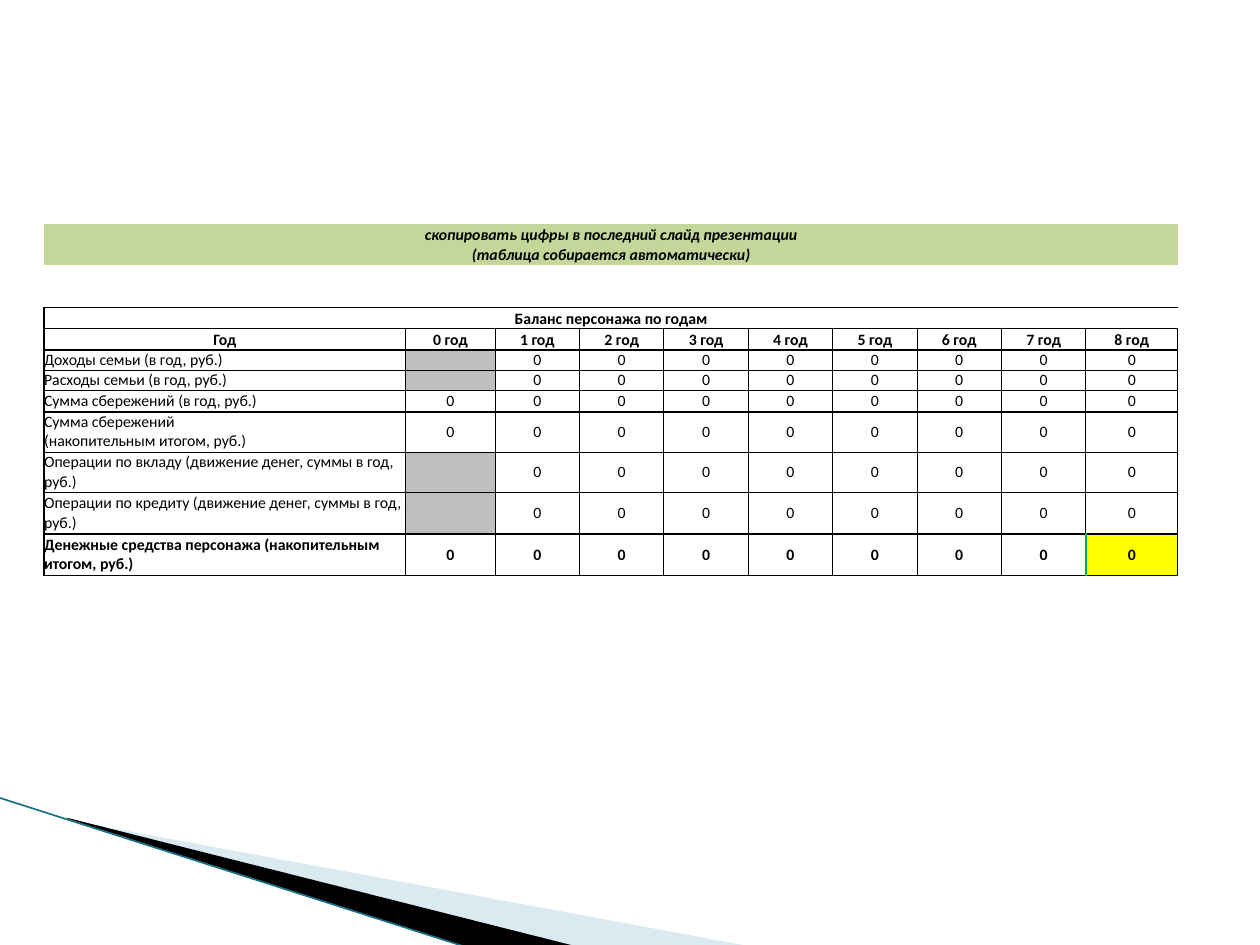
import pptx
import pptx.util
import pptx.dml.color
import pptx.enum.shapes
import pptx.enum.text
import pptx.oxml.ns
import lxml.etree

COLS, ROWS = 100, 75
PLAIN = "{2D5ABB26-0587-4C30-8999-92F81FD0307C}"
WIDTHS = [28.7, 7.1] + [6.7] * 7 + [7.3]
HEIGHTS = [1.6, 1.6, 1.6, 1.8, 1.7, 1.7, 1.6, 1.6, 1.7, 3.2, 3.2, 3.3, 3.3]
BANNER = ["скопировать цифры в последний слайд презентации",
          "(таблица собирается автоматически)"]
TITLE = "Баланс персонажа по годам"
BODY = [
    ("Доходы семьи (в год, руб.)", ""),
    ("Расходы семьи (в год, руб.)", ""),
    ("Сумма сбережений (в год, руб.)", "0"),
    ("Сумма сбережений\v(накопительным итогом, руб.)", "0"),
    ("Операции по вкладу (движение денег, суммы в год, руб.)", ""),
    ("Операции по кредиту (движение денег, суммы в год, руб.)", ""),
    ("Денежные средства персонажа (накопительным итогом, руб.)", "0"),
]
TOP, HEAD, LAST, END = 4, 5, 12, 9
HEAVY = {4, 5, 6, 9, 12, 13}


def rgb(code):
    return pptx.dml.color.RGBColor.from_string(code)


def sub(node, tag, **attrs):
    return lxml.etree.SubElement(node, pptx.oxml.ns.qn(tag), attrs)


def put(item, values):
    for name, value in values.items():
        setattr(item, name, value)


class Deck:
    font = {"name": "Calibri", "size": pptx.util.Pt(9)}
    ink = "000000"

    def __init__(self):
        self.show = pptx.Presentation()
        put(self.show, {"slide_width": pptx.util.Inches(10),
                        "slide_height": pptx.util.Inches(7.5)})
        self.slide = self.show.slides.add_slide(self.show.slide_layouts[6])

    def x(self, col):
        return round(self.show.slide_width * col / COLS)

    def y(self, row):
        return round(self.show.slide_height * row / ROWS)

    def shape(self, points, color, alpha=None):
        spots = [(self.x(a), self.y(b)) for a, b in points]
        pen = self.slide.shapes.build_freeform(*spots[0])
        pen.add_line_segments(spots[1:], close=True)
        form = pen.convert_to_shape()
        form.shadow.inherit = False
        form.fill.solid()
        form.fill.fore_color.rgb = rgb(color)
        form.line.fill.background()
        if alpha:
            tone = form.fill._xPr.find(".//" + pptx.oxml.ns.qn("a:srgbClr"))
            sub(tone, "a:alpha", val=str(alpha * 1000))

    def line(self, start, stop, color, width):
        kind = pptx.enum.shapes.MSO_CONNECTOR.STRAIGHT
        rule = self.slide.shapes.add_connector(
            kind, self.x(start[0]), self.y(start[1]), self.x(stop[0]), self.y(stop[1]))
        rule.line.color.rgb = rgb(color)
        rule.line.width = pptx.util.Pt(width)
        sub(rule._element.spPr, "a:effectLst")

    def table(self, left, top, widths, heights):
        frame = self.slide.shapes.add_table(
            len(heights), len(widths), self.x(left), self.y(top),
            self.x(sum(widths)), self.y(sum(heights)))
        grid = frame.table
        put(grid, {"first_row": False, "horz_banding": False})
        grid._tbl.tblPr.find(pptx.oxml.ns.qn("a:tableStyleId")).text = PLAIN
        for col, width in zip(grid.columns, widths):
            col.width = self.x(width)
        for row, height in zip(grid.rows, heights):
            row.height = self.y(height)
        return grid

    def cell(self, cell, text, edges, fill=None, bold=False, italic=False,
             align="CENTER", anchor="MIDDLE"):
        put(cell, {"margin_left": 0, "margin_right": 0, "margin_top": 0, "margin_bottom": 0,
                   "vertical_anchor": getattr(pptx.enum.text.MSO_ANCHOR, anchor)})
        for side, edge in zip("LRTB", edges):
            self.edge(cell, side, edge)
        if fill:
            cell.fill.solid()
            cell.fill.fore_color.rgb = rgb(fill)
        else:
            cell.fill.background()
        cell.text = text
        para = cell.text_frame.paragraphs[0]
        para.alignment = getattr(pptx.enum.text.PP_ALIGN, align)
        for run in para.runs:
            put(run.font, {**self.font, "bold": bold, "italic": italic})
            run.font.color.rgb = rgb(self.ink)
        if not text:
            sub(para._p, "a:endParaRPr", sz="900")

    def edge(self, cell, side, edge):
        width, color = edge or (0, None)
        ln = sub(cell._tc.get_or_add_tcPr(), "a:ln" + side, w=str(pptx.util.Pt(width)))
        if color:
            sub(sub(ln, "a:solidFill"), "a:srgbClr", val=color)
        else:
            sub(ln, "a:noFill")


def edges(row, col):
    ink = Deck.ink

    def level(at):
        return (1 if at in HEAVY else 0.5, ink) if at >= TOP else None

    def upright(at):
        if row < TOP or (row == TOP and 0 < at <= END):
            return None
        if row == LAST and at == END:
            return 1.5, "00B050"
        return (1 if at in (0, END + 1) else 0.5, ink)

    return upright(col), upright(col + 1), level(row), level(row + 1)


def style(row, col):
    look = {"bold": row <= HEAD or row == LAST}
    if row <= HEAD:
        look["anchor"] = "BOTTOM"
    elif col == 0:
        look["align"] = "LEFT"
    if row < len(BANNER):
        look.update(fill="C4D79B", italic=True)
    elif row > HEAD and col == 1 and not BODY[row - HEAD - 1][1]:
        look["fill"] = "BFBFBF"
    elif (row, col) == (LAST, END):
        look["fill"] = "FFFF00"
    return look


def main():
    deck = Deck()
    deck.shape([(5.5, 65.1), (59.5, 75.1), (45.6, 75.1), (5.5, 65)], "A0CBDC", 40)
    deck.shape([(5.3, 64.9), (45.7, 75.1), (37.2, 75.2), (5.4, 65)], "000000")
    deck.line((-0.1, 63.3), (37.1, 75.2), "1B7088", 0.95)

    rest = [""] * END
    texts = [[line] + rest for line in BANNER] + [[""] + rest] * 2
    texts += [[TITLE] + rest, ["Год"] + [f"{year} год" for year in range(END)]]
    texts += [[name, first] + ["0"] * (END - 1) for name, first in BODY]

    grid = deck.table(3.5, 17.8, WIDTHS, HEIGHTS)
    for row, line in enumerate(texts):
        for col, text in enumerate(line):
            deck.cell(grid.cell(row, col), text, edges(row, col), **style(row, col))
    for row in (0, 1, TOP):
        grid.cell(row, 0).merge(grid.cell(row, END))
    deck.show.save("out.pptx")


if __name__ == "__main__":
    main()
